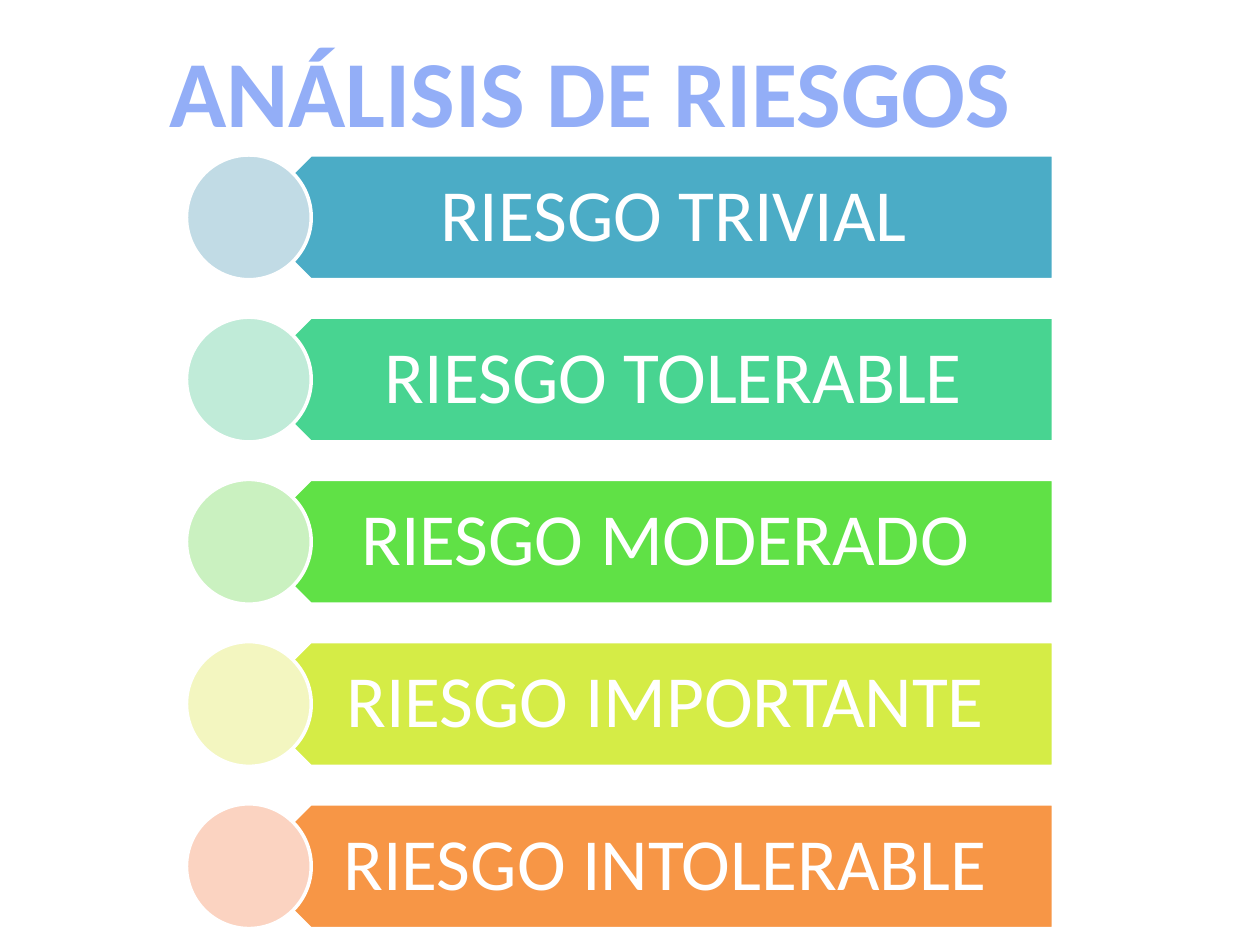
from pptx import Presentation
from pptx.dml.color import RGBColor
from pptx.enum.shapes import MSO_SHAPE as Shape
from pptx.enum.text import MSO_ANCHOR as Anchor, PP_ALIGN as Align
from pptx.util import Inches, Pt

WHITE = RGBColor(0xFF, 0xFF, 0xFF)
PERIWINKLE = RGBColor(0x93, 0xAE, 0xF7)

TITLE = "ANÁLISIS DE RIESGOS "
# Risk level, banner colour, circle colour
RISKS = [
    ("RIESGO TRIVIAL", RGBColor(0x4B, 0xAC, 0xC6), RGBColor(0xC1, 0xDB, 0xE5)),
    ("RIESGO TOLERABLE", RGBColor(0x48, 0xD4, 0x91), RGBColor(0xC0, 0xEB, 0xD8)),
    ("RIESGO MODERADO ", RGBColor(0x60, 0xE1, 0x46), RGBColor(0xCA, 0xF1, 0xC0)),
    ("RIESGO IMPORTANTE ", RGBColor(0xD5, 0xEC, 0x46), RGBColor(0xF3, 0xF6, 0xC0)),
    ("RIESGO INTOLERABLE ", RGBColor(0xF7, 0x96, 0x46), RGBColor(0xFB, 0xD3, 0xC1)),
]

FIRST_TOP, ROW_STEP, ROW_HEIGHT = 1.23, 1.2875, 0.99
CIRCLE_LEFT = 1.48
BANNER_LEFT, BANNER_WIDTH = 1.97, 6.39
LABEL_LEFT, LABEL_WIDTH = 2.22, 6.14
LABEL_FRAME = {
    "margin_left": Inches(0.44),
    "margin_right": Inches(0.33),
    "margin_top": Inches(0.17),
    "margin_bottom": Inches(0.17),
    "vertical_anchor": Anchor.MIDDLE,
    "word_wrap": True,
}
TITLE_FRAME = {"word_wrap": False}
LABEL_FONT = {"name": "Calibri", "size": Pt(42)}
TITLE_FONT = {"name": "Calibri", "size": Pt(54), "bold": True}


def set_all(target, values):
    for name, value in values.items():
        setattr(target, name, value)


def add_outlined(slide, preset, box, fill):
    """Add a preset shape with a solid fill and a white outline."""
    shape = slide.shapes.add_shape(preset, *map(Inches, box))
    shape.shadow.inherit = False
    shape.fill.solid()
    shape.fill.fore_color.rgb = fill
    shape.line.color.rgb = WHITE
    shape.line.width = Pt(2)
    return shape


def add_text(slide, text, box, frame_format, font_format, color):
    """Add one centred line of text and return its paragraph."""
    frame = slide.shapes.add_textbox(*map(Inches, box)).text_frame
    set_all(frame, frame_format)
    paragraph = frame.paragraphs[0]
    paragraph.alignment = Align.CENTER
    run = paragraph.add_run()
    run.text = text
    set_all(run.font, font_format)
    run.font.color.rgb = color
    return paragraph


def main():
    prs = Presentation()
    prs.slide_width, prs.slide_height = Inches(10), Inches(7.5)
    slide = prs.slides.add_slide(prs.slide_layouts[6])

    for row, (risk, banner_color, circle_color) in enumerate(RISKS):
        top = FIRST_TOP + row * ROW_STEP
        banner = add_outlined(slide, Shape.PENTAGON,
                              (BANNER_LEFT, top, BANNER_WIDTH, ROW_HEIGHT), banner_color)
        banner.rotation = 180
        # The label has its own box, as text in the turned banner would be upside down
        label = add_text(slide, risk, (LABEL_LEFT, top, LABEL_WIDTH, ROW_HEIGHT),
                         LABEL_FRAME, LABEL_FONT, WHITE)
        label.line_spacing = 0.9
        add_outlined(slide, Shape.OVAL,
                     (CIRCLE_LEFT, top, ROW_HEIGHT, ROW_HEIGHT), circle_color)

    add_text(slide, TITLE, (1.07, 0.21, 7.4, 1.01), TITLE_FRAME, TITLE_FONT, PERIWINKLE)
    prs.save("out.pptx")


if __name__ == "__main__":
    main()
